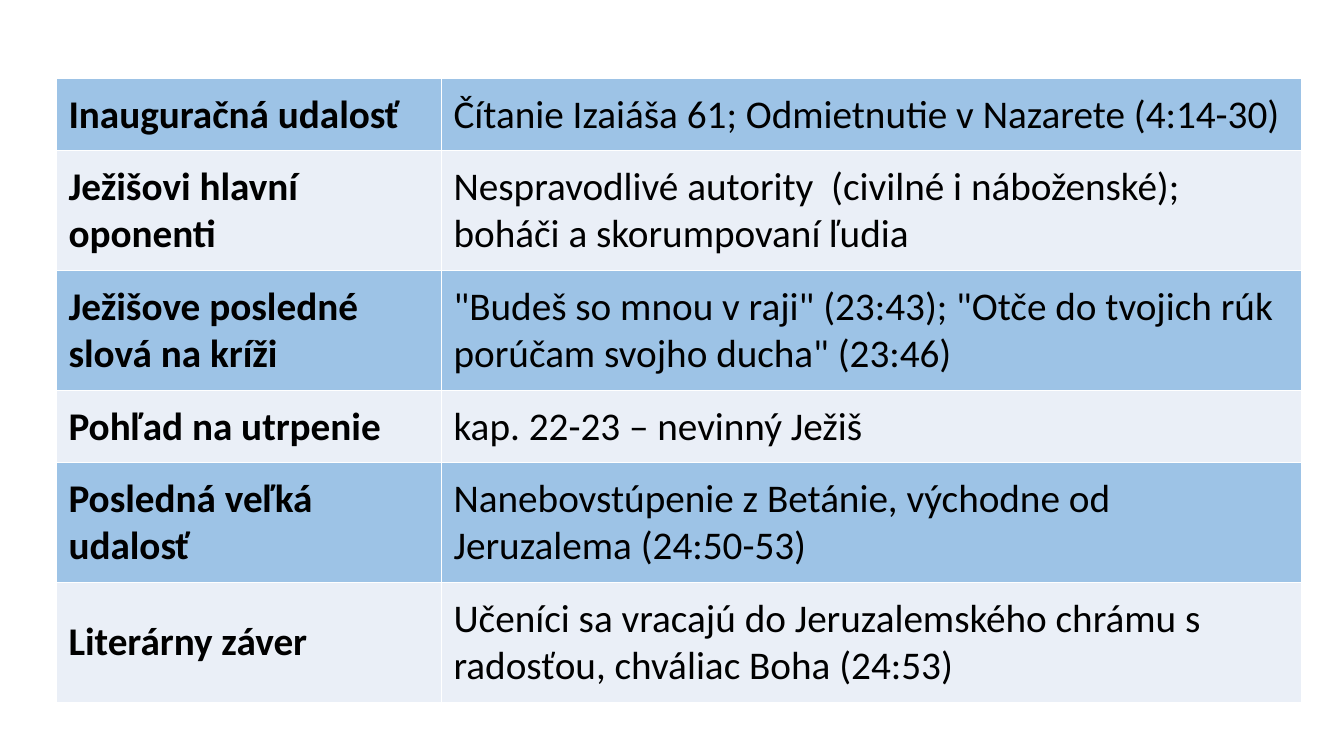
from lxml import etree
from pptx import Presentation
from pptx.dml.color import RGBColor
from pptx.enum import text
from pptx.oxml import ns
from pptx.util import Inches, Pt

FONT = "Calibri"
BLACK, WHITE = "000000", "FFFFFF"
BAND_FILLS = ("9DC3E6", "EAEFF7")
COLUMN_WIDTHS = (3.82, 8.53)
ONE_LINE, TWO_LINES = 0.71, 1.19

# Topic, its description in the gospel, row height
GOSPEL_EVENTS = [
    ("Inauguračná udalosť",
     "Čítanie Izaiáša 61; Odmietnutie v Nazarete (4:14-30)", ONE_LINE),
    ("Ježišovi hlavní oponenti",
     "Nespravodlivé autority  (civilné i náboženské); boháči a skorumpovaní ľudia",
     TWO_LINES),
    ("Ježišove posledné slová na kríži",
     '"Budeš so mnou v raji" (23:43); "Otče do tvojich rúk porúčam svojho ducha" (23:46)',
     TWO_LINES),
    ("Pohľad na utrpenie ", "kap. 22-23 – nevinný Ježiš", ONE_LINE),
    ("Posledná veľká udalosť",
     "Nanebovstúpenie z Betánie, východne od Jeruzalema (24:50-53)", TWO_LINES),
    ("Literárny záver",
     "Učeníci sa vracajú do Jeruzalemského chrámu s radosťou, chváliac Boha (24:53)",
     TWO_LINES),
]


def color(hex_code):
    return RGBColor.from_string(hex_code)


def add_borders(cell, hex_code, width):
    """Draw all four cell edges; they precede the fill in the cell properties."""
    properties = cell._tc.get_or_add_tcPr()
    for position, edge in enumerate(("a:lnL", "a:lnR", "a:lnT", "a:lnB")):
        line = etree.Element(ns.qn(edge), w=str(Pt(width)))
        fill = etree.SubElement(line, ns.qn("a:solidFill"))
        etree.SubElement(fill, ns.qn("a:srgbClr"), val=hex_code)
        properties.insert(position, line)


def fill_cell(cell, wording, band, bold):
    cell.fill.solid()
    cell.fill.fore_color.rgb = color(band)
    add_borders(cell, WHITE, 1)
    cell.vertical_anchor = text.MSO_ANCHOR.MIDDLE
    cell.margin_left = cell.margin_right = Inches(0.12)
    cell.margin_top = cell.margin_bottom = Inches(0.12)
    run = cell.text_frame.paragraphs[0].add_run()
    run.text = wording
    run.font.name = FONT
    run.font.size = Pt(28)
    run.font.bold = bold
    run.font.color.rgb = color(BLACK)


def add_events_table(slide):
    total_height = sum(height for _, _, height in GOSPEL_EVENTS)
    events = slide.shapes.add_table(
        len(GOSPEL_EVENTS), len(COLUMN_WIDTHS), Inches(0.56), Inches(0.78),
        Inches(sum(COLUMN_WIDTHS)), Inches(total_height)).table
    for column, width in zip(events.columns, COLUMN_WIDTHS):
        column.width = Inches(width)
    for index, (topic, description, height) in enumerate(GOSPEL_EVENTS):
        events.rows[index].height = Inches(height)
        band = BAND_FILLS[index % 2]
        fill_cell(events.cell(index, 0), topic, band, True)
        fill_cell(events.cell(index, 1), description, band, False)


def main():
    presentation = Presentation()
    presentation.slide_width = Inches(13.33)
    presentation.slide_height = Inches(7.5)
    slide = presentation.slides.add_slide(presentation.slide_layouts[6])

    # Table of the key events
    add_events_table(slide)

    presentation.save("out.pptx")


if __name__ == "__main__":
    main()
